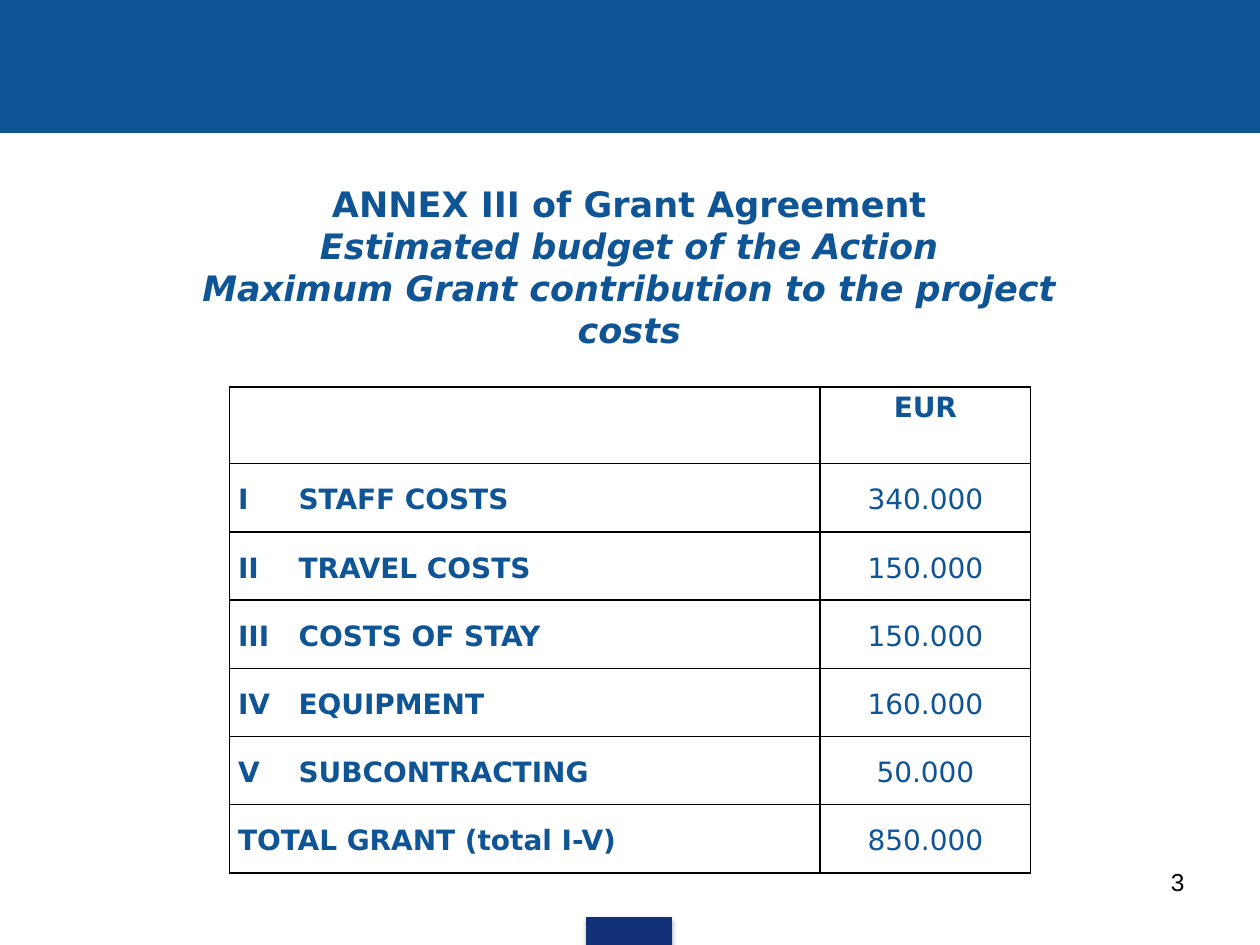
from lxml import etree
from pptx import Presentation
from pptx.dml.color import RGBColor
from pptx.enum import shapes, text
from pptx.oxml import parse_xml
from pptx.oxml import ns
from pptx.util import Inches, Pt

COLOURS = {"blue": "0F5494", "navy": "133176", "black": "000000", "white": "FFFFFF"}
HEADING = {"size": Pt(20), "name": "DejaVu Sans", "bold": True}
CELL = {"size": Pt(16), "name": "DejaVu Sans"}
NUMBER = {"size": Pt(14), "name": "Arial"}
BUDGET = [
    ("", "EUR"),
    ("I\tSTAFF COSTS", "340.000"),
    ("II\tTRAVEL COSTS", "150.000"),
    ("III\tCOSTS OF STAY", "150.000"),
    ("IV\tEQUIPMENT", "160.000"),
    ("V\tSUBCONTRACTING", "50.000"),
    ("TOTAL GRANT (total I-V)", "850.000"),
]


def rgb(key):
    return RGBColor.from_string(COLOURS[key])


def set_font(font, formats, colour, **extra):
    for attribute, value in {**formats, **extra}.items():
        setattr(font, attribute, value)
    font.color.rgb = rgb(colour)


def add_band(slide, box, colour):
    band = slide.shapes.add_shape(shapes.MSO_SHAPE.RECTANGLE, *map(Inches, box))
    band.shadow.inherit = False
    band.fill.solid()
    band.fill.fore_color.rgb = rgb(colour)
    band.line.color.rgb = rgb(colour)
    band.line.width = Pt(0.75)
    return band


def add_footer_tab(slide, box):
    tab = add_band(slide, box, "navy")
    effects = tab._element.spPr.find(ns.qn("a:effectLst"))
    effects.append(parse_xml(
        f'<a:outerShdw {ns.nsdecls("a")} blurRad="{Pt(3.1)}" dist="{Pt(1.8)}" '
        f'dir="5400000" rotWithShape="0"><a:srgbClr val="{COLOURS["black"]}">'
        '<a:alpha val="35000"/></a:srgbClr></a:outerShdw>'))


def add_heading(slide, box):
    frame = slide.shapes.add_textbox(*map(Inches, box)).text_frame
    frame.word_wrap = True
    lines = [
        ("ANNEX III of Grant Agreement", False),
        ("Estimated budget of the Action", True),
        ("Maximum Grant contribution to the project costs", True),
    ]
    for index, (line, italic) in enumerate(lines):
        paragraph = frame.add_paragraph() if index else frame.paragraphs[0]
        paragraph.text = line
        paragraph.alignment = text.PP_ALIGN.CENTER
        set_font(paragraph.font, HEADING, "blue", italic=italic)


def add_borders(cell):
    properties = cell._tc.get_or_add_tcPr()
    for index, side in enumerate(("lnL", "lnR", "lnT", "lnB")):
        properties.insert(index, parse_xml(
            f'<a:{side} {ns.nsdecls("a")} w="{Pt(1)}"><a:solidFill>'
            f'<a:srgbClr val="{COLOURS["black"]}"/></a:solidFill></a:{side}>'))


def add_numeral_tab(paragraph):
    tabs = etree.SubElement(paragraph._p.get_or_add_pPr(), ns.qn("a:tabLst"))
    etree.SubElement(tabs, ns.qn("a:tab"), pos=str(Inches(0.48)), algn="l")


def fill_cell(cell, content, is_amount, is_header):
    layout = {
        "margin_left": Inches(0.07), "margin_right": Inches(0.07),
        "margin_top": 0, "margin_bottom": 0,
        "vertical_anchor": text.MSO_ANCHOR.TOP if is_header else text.MSO_ANCHOR.MIDDLE,
    }
    for attribute, value in layout.items():
        setattr(cell, attribute, value)
    cell.fill.solid()
    cell.fill.fore_color.rgb = rgb("white")
    add_borders(cell)
    paragraph = cell.text_frame.paragraphs[0]
    paragraph.text = content
    paragraph.line_spacing = 1.15
    paragraph.alignment = text.PP_ALIGN.CENTER if is_amount else text.PP_ALIGN.LEFT
    if "\t" in content:
        add_numeral_tab(paragraph)
    set_font(paragraph.font, CELL, "blue", bold=is_header or not is_amount)


def add_budget(slide, box):
    left, top, width, height = box
    header_height, amount_width = 0.61, 1.67
    budget = slide.shapes.add_table(len(BUDGET), 2, *map(Inches, box)).table
    budget.first_row = False
    budget.horz_banding = False
    budget.columns[0].width = Inches(width - amount_width)
    budget.columns[1].width = Inches(amount_width)
    row_height = (height - header_height) / (len(BUDGET) - 1)
    for row, contents in enumerate(BUDGET):
        budget.rows[row].height = Inches(row_height if row else header_height)
        for column, content in enumerate(contents):
            fill_cell(budget.cell(row, column), content, column == 1, row == 0)


def add_page_number(slide, box):
    frame = slide.shapes.add_textbox(*map(Inches, box)).text_frame
    frame.word_wrap = True
    paragraph = frame.paragraphs[0]
    paragraph.text = "3"
    paragraph.alignment = text.PP_ALIGN.RIGHT
    set_font(paragraph.font, NUMBER, "black")


def main():
    deck = Presentation()
    deck.slide_width, deck.slide_height = Inches(10), Inches(7.5)
    slide = deck.slides.add_slide(deck.slide_layouts[6])
    add_band(slide, (0, 0, 10, 1.05), "blue")
    add_footer_tab(slide, (4.66, 7.28, 0.67, 0.22))
    add_budget(slide, (1.82, 3.07, 6.36, 3.86))
    add_heading(slide, (1.06, 1.4, 7.87, 1.41))
    add_page_number(slide, (7.17, 6.83, 2.33, 0.52))
    deck.save("out.pptx")


if __name__ == "__main__":
    main()
